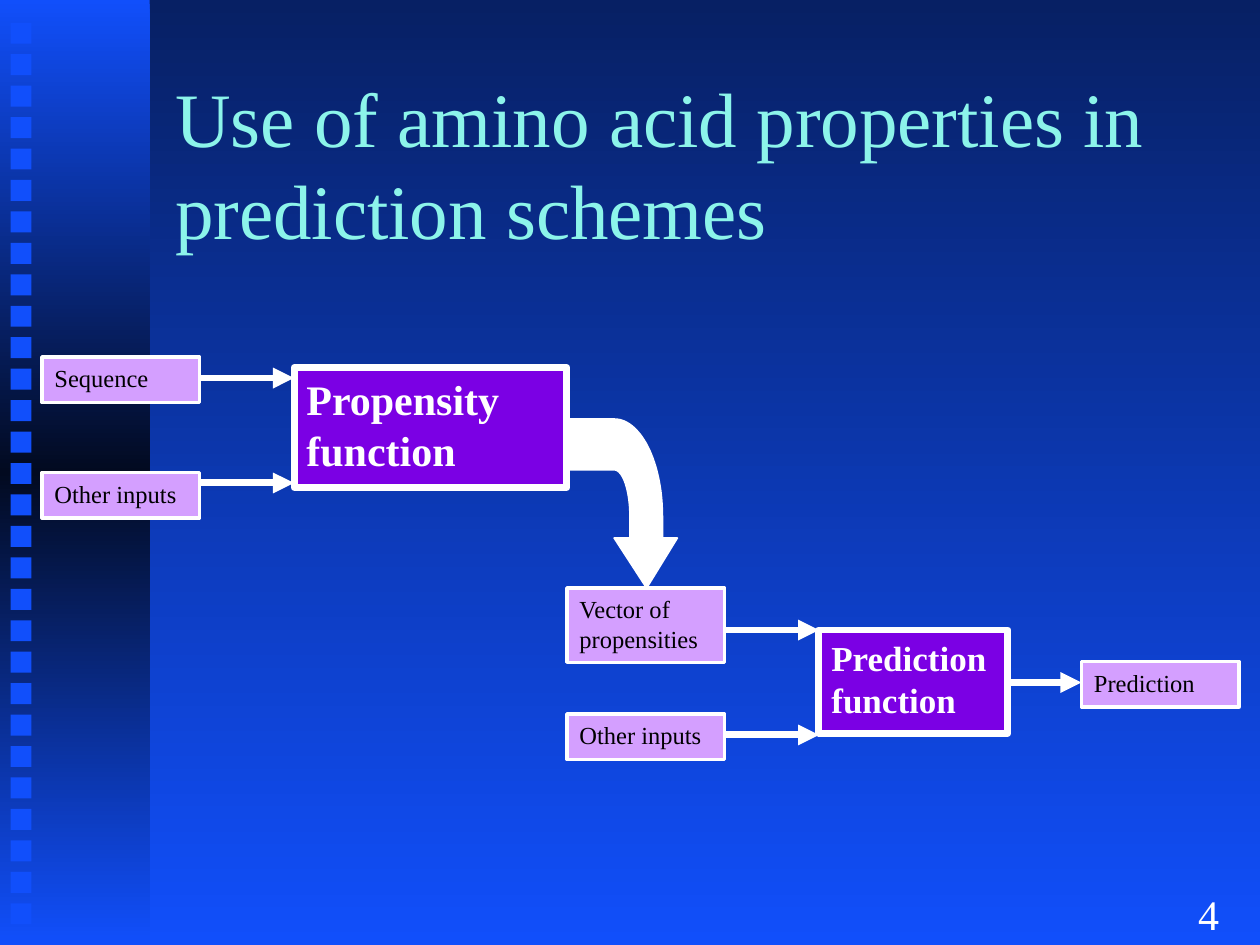
import copy
import math

import pptx
import pptx.dml.color
import pptx.enum.shapes
import pptx.enum.text
import pptx.oxml
import pptx.oxml.ns
import pptx.util

Pt = pptx.util.Pt
qn = pptx.oxml.ns.qn
HUES = {
    "navy": "072064", "blue": "114FFB", "dark": "020A20", "aqua": "8CF4EA",
    "white": "FFFFFF", "black": "000000", "plum": "7B00E4", "lilac": "D49FFF",
}


def hue(name):
    return pptx.dml.color.RGBColor.from_string(HUES[name])


class Deck:
    """Holds the style and the current slide."""

    font = "Times New Roman"

    def __init__(self, slide):
        self.slide = slide
        self.shapes = slide.shapes

    def fade(self, fill, root, names):
        fill.gradient()
        fill.gradient_angle = 270
        stops = next(root.iter(qn("a:gsLst")))
        while len(stops) < len(names):
            stops.append(copy.deepcopy(stops[0]))
        for i, (stop, name) in enumerate(zip(fill.gradient_stops, names)):
            stop.color.rgb = hue(name)
            stop.position = i / (len(names) - 1)

    def paint(self, shape, fill, line=0):
        shape.shadow.inherit = False
        shape.fill.solid()
        shape.fill.fore_color.rgb = hue(fill)
        if line:
            shape.line.color.rgb = hue("white")
            shape.line.width = Pt(line)
        else:
            shape.line.fill.background()

    def rect(self, x, y, w, h, fill, line=0):
        kind = pptx.enum.shapes.MSO_SHAPE.RECTANGLE
        shape = self.shapes.add_shape(kind, Pt(x), Pt(y), Pt(w), Pt(h))
        self.paint(shape, fill, line)
        return shape

    def words(self, shape, text, size, color, bold=False, anchor="TOP"):
        frame = shape.text_frame
        frame.text = text
        frame.word_wrap = True
        frame.vertical_anchor = pptx.enum.text.MSO_ANCHOR[anchor]
        para = frame.paragraphs[0]
        para.alignment = pptx.enum.text.PP_ALIGN.LEFT
        font = para.runs[0].font
        font.name, font.size, font.bold = self.font, Pt(size), bold
        font.color.rgb = hue(color)
        return para.runs[0]

    def label(self, x, y, w, h, text, size, color, anchor="TOP"):
        box = self.shapes.add_textbox(Pt(x), Pt(y), Pt(w), Pt(h))
        return self.words(box, text, size, color, anchor=anchor)

    def title(self, text):
        run = self.label(93, 48, 608, 90, text, 44, "aqua", "MIDDLE")
        glow = pptx.oxml.parse_xml(
            f'<a:effectLst {pptx.oxml.ns.nsdecls("a")}>'
            '<a:outerShdw dist="35921" dir="2700000" algn="ctr">'
            f'<a:srgbClr val="{HUES["black"]}"/></a:outerShdw></a:effectLst>')
        run._r.rPr.find(qn("a:solidFill")).addnext(glow)

    def data(self, x, y, text, h=26):
        box = self.rect(x, y, 90, h, "lilac", 2)
        self.words(box, text, 14, "black")

    def step(self, x, y, w, h, text, size):
        box = self.rect(x, y, w, h, "plum", 4)
        self.words(box, text, size, "white", True)

    def arrow(self, x, y, end):
        kind = pptx.enum.shapes.MSO_CONNECTOR.STRAIGHT
        link = self.shapes.add_connector(kind, Pt(x), Pt(y), Pt(end), Pt(y))
        link.line.color.rgb = hue("white")
        link.line.width = Pt(4)
        props = link._element.spPr
        tip = props.find(qn("a:ln"))
        tip.append(tip.makeelement(qn("a:tailEnd"), {"type": "triangle"}))
        props.append(props.makeelement(qn("a:effectLst"), {}))

    def bend(self):
        def arc(rx, ry):
            turns = [math.pi * i / 48 for i in range(25)]
            return [(351 + rx * math.cos(t), 295 - ry * math.sin(t))
                    for t in turns]

        dots = [(369.5, 336), (387, 307.5), (378.5, 307.5)]
        dots += arc(27.5, 55.5) + [(324, 239.5), (324, 268.5)]
        dots += arc(9, 26.5)[::-1] + [(360, 307.5), (351, 307.5)]
        dots = [(Pt(x), Pt(y)) for x, y in dots]
        pen = self.shapes.build_freeform(*dots[0])
        pen.add_line_segments(dots[1:], close=True)
        self.paint(pen.convert_to_shape(), "white", 1)


def main():
    show = pptx.Presentation()
    show.slide_width, show.slide_height = Pt(720), Pt(540)
    deck = Deck(show.slides.add_slide(show.slide_layouts[6]))

    back = deck.slide.background.fill
    deck.fade(back, deck.slide._element, ["navy", "blue"])
    bar = deck.rect(0, 0, 85.5, 539.5, "blue")
    deck.fade(bar.fill, bar._element, ["blue", "dark", "blue"])
    for i in range(29):
        deck.rect(6, 13 + 17.97 * i, 12, 12, "blue")

    deck.label(677.5, 504, 42.5, 36, "4", 24, "white")
    deck.title("Use of amino acid properties in prediction schemes")

    for x, y, end in [(114, 216, 168), (114, 276, 168), (414, 360, 468),
                      (414, 420, 468), (576, 390, 618)]:
        deck.arrow(x, y, end)
    deck.step(168, 210, 156, 68.5, "Propensity function", 24)
    deck.step(468, 360, 108, 59, "Prediction function", 20)
    deck.bend()
    deck.data(24, 204, "Sequence")
    deck.data(24, 270, "Other inputs")
    deck.data(324, 336, "Vector of propensities", 42.5)
    deck.data(324, 408, "Other inputs")
    deck.data(618, 378, "Prediction")
    show.save("out.pptx")


if __name__ == "__main__":
    main()
